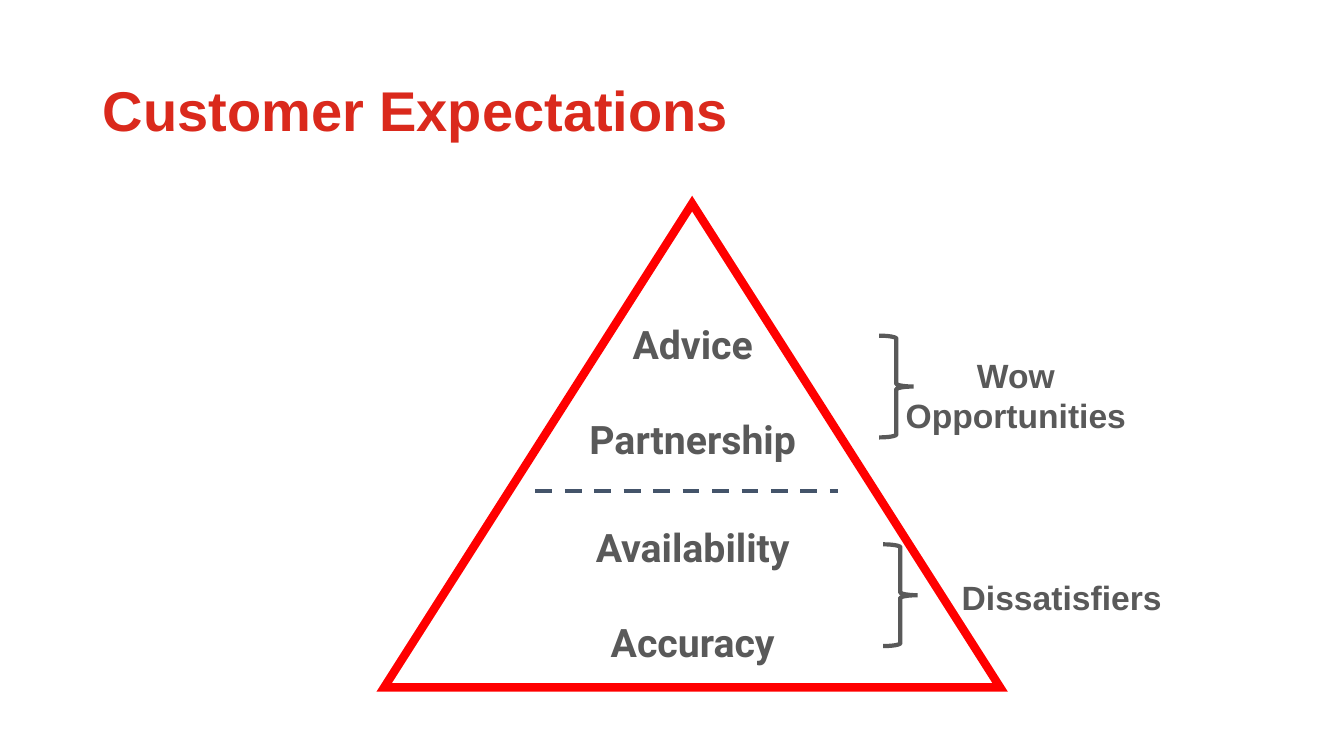
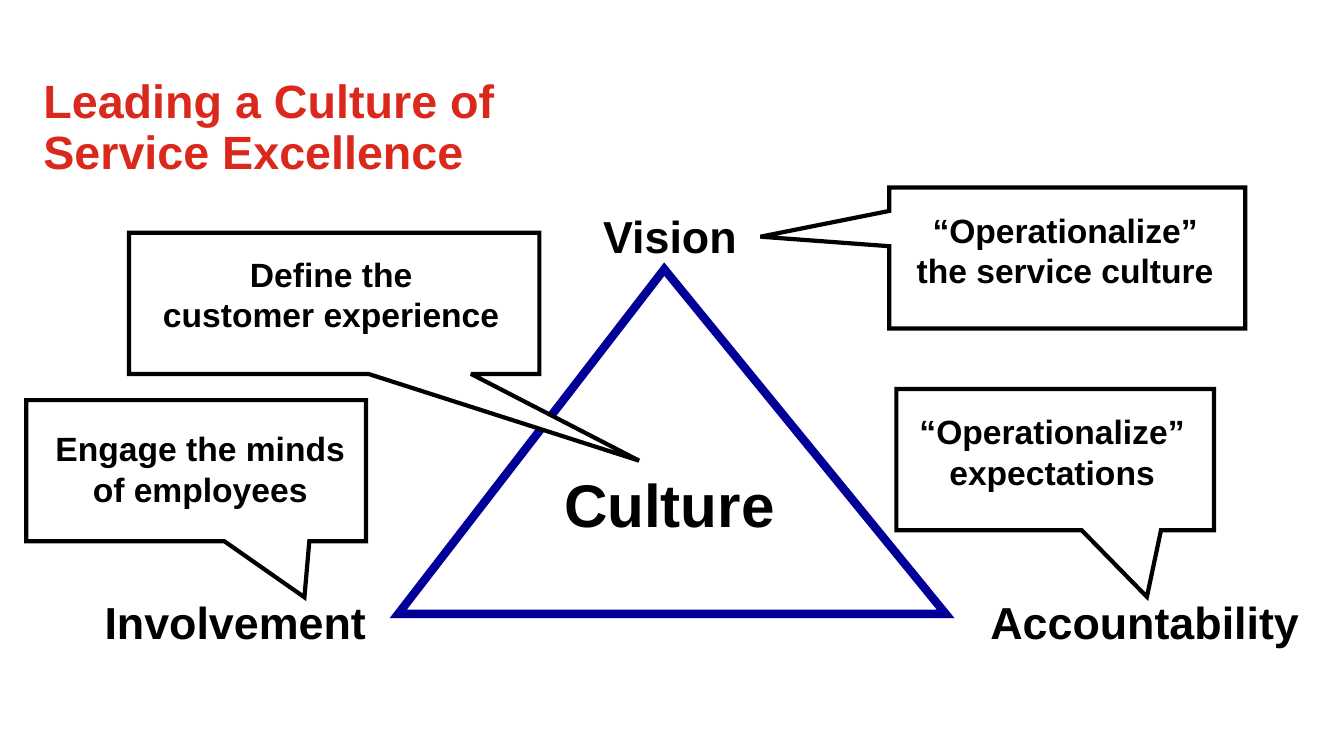
from lxml.etree import SubElement
from pptx import Presentation
from pptx.dml.color import RGBColor
from pptx.enum.dml import MSO_LINE
from pptx.enum.shapes import MSO_CONNECTOR, MSO_SHAPE as SHAPE
from pptx.enum.text import MSO_ANCHOR as ANCHOR, MSO_AUTO_SIZE, PP_ALIGN as ALIGN
from pptx.oxml.ns import qn
from pptx.util import Inches, Pt

# Shared style
RED, GRAY, BLACK, WHITE = "DA291C", "595959", "000000", "FFFFFF"
FONT = "Arial"
INSETS = (0.1, 0.05, 0.1, 0.05)
LABEL_INSETS = (0.13, 0.07, 0.13, 0.07)

# Customer Expectations: level and space before it in points
LEVELS = [("Advice", 0), ("Partnership", 34), ("Availability", 44), ("Accuracy", 34)]
# Brace left and top, caption, caption place
BRACES = [
    (8.76, 5.4, "Dissatisfiers", (9.43, 5.67, 2.2, 0.5)),
    (8.72, 3.33, "Wow\nOpportunities", (8.87, 3.47, 2.41, 0.91)),
]

# Leading a Culture: text, size, place
LABELS = [
    ("Vision", 32, (5.84, 2, 1.61, 0.67)),
    ("Accountability", 32, (9.67, 5.83, 3.37, 0.67)),
    ("Involvement", 32, (0.89, 5.83, 2.89, 0.67)),
    ("Culture", 43, (5.46, 4.57, 2.36, 0.85)),
]
# Text, place, pointer tip, text insets
CALLOUTS = [
    ("Engage the minds\nof employees", (0.26, 3.97, 3.37, 1.4),
     (0.319, 0.897), (0.18, 0.28, 0.1, 0.05)),
    ("“Operationalize”\nthe service culture", (8.82, 1.86, 3.53, 1.4),
     (-0.862, -0.151), (0.1, 0.22, 0.14, 0.05)),
    ("“Operationalize”\nexpectations", (8.89, 3.86, 3.15, 1.4),
     (0.289, 0.973), (0.1, 0.22, 0.16, 0.05)),
    ("Define the\ncustomer experience", (1.28, 2.31, 4.07, 1.4),
     (0.743, 1.115), (0.1, 0.21, 0.16, 0.05)),
]


def color(value):
    return RGBColor.from_string(value)


def inches(values):
    return [Inches(value) for value in values]


def write(frame, paragraphs, size=24, fill=BLACK, font=FONT, align=ALIGN.CENTER,
          anchor=ANCHOR.TOP, insets=INSETS, wrap=False, spacing=None):
    """Fill a text frame with (text, space before) pairs; a string is one paragraph."""
    if isinstance(paragraphs, str):
        paragraphs = [(paragraphs, 0)]
    frame.word_wrap = wrap
    frame.auto_size = MSO_AUTO_SIZE.NONE
    frame.vertical_anchor = anchor
    (frame.margin_left, frame.margin_top,
     frame.margin_right, frame.margin_bottom) = inches(insets)
    for index, (text, before) in enumerate(paragraphs):
        para = frame.add_paragraph() if index else frame.paragraphs[0]
        para.text = text.replace("\n", "\v")
        para.alignment = align
        para.space_before = Pt(before)
        if spacing:
            para.line_spacing = spacing
        para.font.name, para.font.size, para.font.bold = font, Pt(size), True
        para.font.color.rgb = color(fill)


def add_page(deck, title, place, size):
    page = deck.slides.add_slide(deck.slide_layouts[5])
    box = page.shapes.title
    box.left, box.top, box.width, box.height = inches(place)
    write(box.text_frame, title, size=size, fill=RED, align=ALIGN.LEFT,
          anchor=ANCHOR.MIDDLE, wrap=True, spacing=0.9)
    return page


def add_text(page, place, paragraphs, **style):
    box = page.shapes.add_textbox(*inches(place))
    write(box.text_frame, paragraphs, **style)


def add_outline(page, kind, place, line, width, adjust, fill=None):
    shape = page.shapes.add_shape(kind, *inches(place))
    shape.shadow.inherit = False
    if fill:
        shape.fill.solid()
        shape.fill.fore_color.rgb = color(fill)
    else:
        shape.fill.background()
    shape.line.color.rgb = color(line)
    shape.line.width = Pt(width)
    # Sharp corners
    SubElement(shape.line._get_or_add_ln(), qn("a:miter"), lim="800000")
    for index, value in enumerate(adjust):
        shape.adjustments[index] = value
    return shape


def add_dashes(page, start, end, line, width):
    dashes = page.shapes.add_connector(MSO_CONNECTOR.STRAIGHT, *inches(start + end))
    dashes.line.color.rgb = color(line)
    dashes.line.width = Pt(width)
    dashes.line.dash_style = MSO_LINE.DASH
    SubElement(dashes._element.spPr, qn("a:effectLst"))


def build_expectations(deck):
    page = add_page(deck, "Customer Expectations", (0.92, 0.4, 10.15, 1.45), 40)
    add_outline(page, SHAPE.ISOSCELES_TRIANGLE, (3.81, 2.02, 6.11, 4.8),
                "FF0000", 6, [0.5])
    add_text(page, (5.62, 3.13, 2.5, 3.53), LEVELS, size=28, fill=GRAY, font="Roboto")
    add_dashes(page, (5.31, 4.87), (8.31, 4.87), "44546A", 3)
    for left, top, caption, place in BRACES:
        add_outline(page, SHAPE.RIGHT_BRACE, (left, top, 0.34, 1.01),
                    GRAY, 3, [0.087, 0.5])
        add_text(page, place, caption, fill=GRAY)


def build_culture(deck):
    page = add_page(deck, "Leading a Culture of\nService Excellence",
                    (0.33, 0.78, 10.78, 1), 33.3)
    add_outline(page, SHAPE.ISOSCELES_TRIANGLE, (3.95, 2.67, 5.43, 3.42),
                "000099", 6, [0.486])
    for text, size, place in LABELS:
        add_text(page, place, text, size=size, insets=LABEL_INSETS)
    for text, place, tip, insets in CALLOUTS:
        callout = add_outline(page, SHAPE.RECTANGULAR_CALLOUT, place,
                              BLACK, 3, tip, fill=WHITE)
        write(callout.text_frame, text, insets=insets, wrap=True)


def main():
    deck = Presentation()
    deck.slide_width, deck.slide_height = inches((13.33, 7.5))
    build_expectations(deck)
    build_culture(deck)
    deck.save("out.pptx")


if __name__ == "__main__":
    main()
